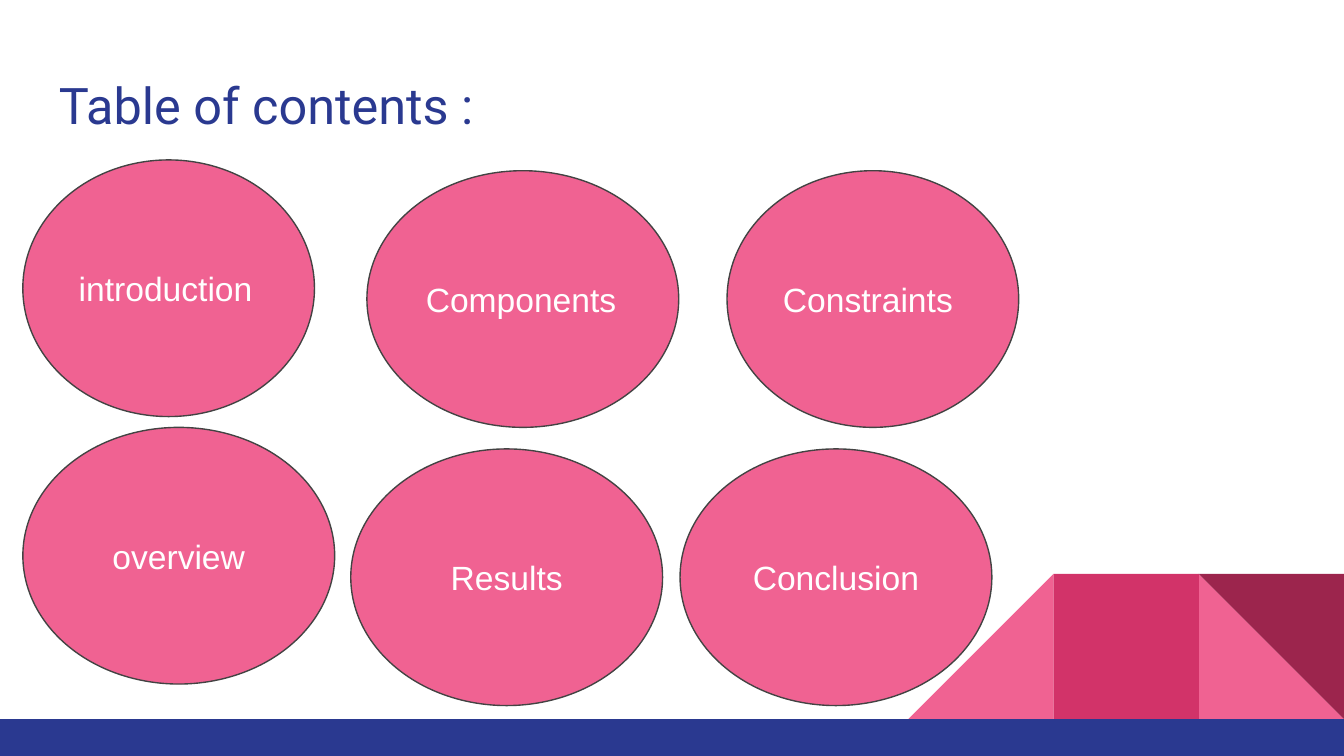
from pptx import Presentation
from pptx.dml.color import RGBColor
from pptx.enum.shapes import MSO_SHAPE as Shape
from pptx.enum.text import MSO_ANCHOR as Anchor, PP_ALIGN as Align
from pptx.util import Inches, Pt

PINK, NAVY = "F06292", "2A3990"
WIDTH = 10
HEIGHT = WIDTH * 9 / 16
TILE = 1.08
BAR_TOP = 5.35
TILE_TOP = BAR_TOP - TILE


def color(target, value):
    if hasattr(target, "solid"):
        target.solid()
        target = target.fore_color
    target.rgb = RGBColor.from_string(value)


def add_filled(kind, box, fill):
    shape = slide.shapes.add_shape(kind, *map(Inches, box))
    shape.shadow.inherit = False
    color(shape.fill, fill)
    shape.line.fill.background()
    return shape


presentation = Presentation()
presentation.slide_width = Inches(WIDTH)
presentation.slide_height = Inches(HEIGHT)
slide = presentation.slides.add_slide(presentation.slide_layouts[6])

tiles = [
    (Shape.RIGHT_TRIANGLE, 1, PINK, {}),
    (Shape.RIGHT_TRIANGLE, 3, PINK, {"flipH": "1"}),
    (Shape.RECTANGLE, 2, "D23369", {}),
    (Shape.RIGHT_TRIANGLE, 1, "9C254D", {"rot": "10800000"}),
]
for kind, columns_from_right, fill, transform in tiles:
    left = WIDTH - columns_from_right * TILE
    tile = add_filled(kind, (left, TILE_TOP, TILE, TILE), fill)
    for name, value in transform.items():
        tile._element.spPr.get_or_add_xfrm().set(name, value)

add_filled(Shape.RECTANGLE, (0, BAR_TOP, WIDTH, HEIGHT - BAR_TOP), NAVY)

title = slide.shapes.add_textbox(*map(Inches, (0.34, 0.45, 9.32, 0.66)))
labels = [(title, "Table of contents :", Anchor.TOP, Align.LEFT, "Roboto", 27, NAVY)]

topics = [
    ("introduction", 0.17, 1.19, 2.17, Align.LEFT),
    ("Components", 2.73, 1.27, 2.32, Align.LEFT),
    ("Constraints", 5.41, 1.27, 2.17, Align.LEFT),
    ("overview", 0.17, 3.18, 2.32, Align.CENTER),
    ("Results", 2.61, 3.34, 2.32, Align.CENTER),
    ("Conclusion", 5.06, 3.34, 2.32, Align.CENTER),
]
for topic, left, top, width, alignment in topics:
    ellipse = add_filled(Shape.OVAL, (left, top, width, 1.91), PINK)
    color(ellipse.line.fill, "434343")
    ellipse.line.width = Pt(0.75)
    labels.append((ellipse, topic, Anchor.MIDDLE, alignment, "Arial", 18, "FFFFFF"))

for shape, text, anchor, alignment, font_name, size, text_color in labels:
    frame = shape.text_frame
    frame_format = {"word_wrap": True, "vertical_anchor": anchor}
    for side in ("left", "top", "right", "bottom"):
        frame_format[f"margin_{side}"] = Inches(0.1)
    for name, value in frame_format.items():
        setattr(frame, name, value)
    paragraph = frame.paragraphs[0]
    paragraph.alignment = alignment
    run = paragraph.add_run()
    run.text = text
    for name, value in {"name": font_name, "size": Pt(size)}.items():
        setattr(run.font, name, value)
    color(run.font.color, text_color)

presentation.save("out.pptx")
